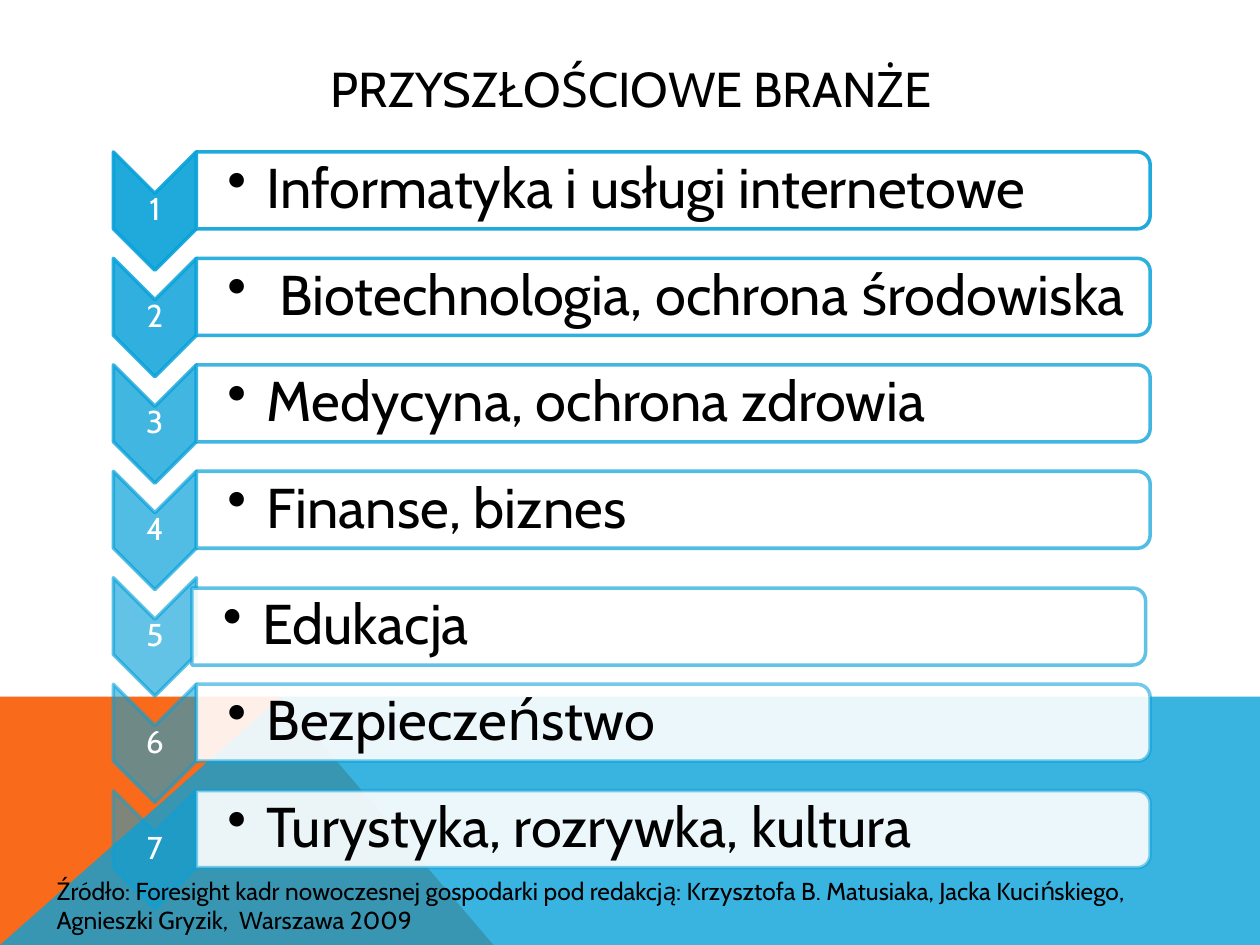
from pptx import Presentation
from pptx.dml.color import RGBColor
from pptx.enum import shapes as sh, text as tx
from pptx.oxml.ns import qn
from pptx.util import Pt
from lxml import etree

FONT = "Cabin"
BLUE, ORANGE, WHITE, BLACK = "08A1D9", "F96A1B", "FFFFFF", "000000"
BRANCHES = [
    "Informatyka i usługi internetowe",
    " Biotechnologia, ochrona środowiska",
    "Medycyna, ochrona zdrowia",
    "Finanse, biznes",
    "Edukacja",
    "Bezpieczeństwo",
    "Turystyka, rozrywka, kultura",
]
SOURCE = ("Źródło: Foresight kadr nowoczesnej gospodarki pod redakcją: "
          "Krzysztofa B. Matusiaka, Jacka Kucińskiego, Agnieszki Gryzik,  Warszawa 2009")


def paint(fill, color, alpha=100):
    """Give a fill a solid hex colour with an opacity in percent."""
    fill.solid()
    fill.fore_color.rgb = RGBColor.from_string(color)
    if alpha < 100:
        clr = fill._xPr.find(".//" + qn("a:srgbClr"))
        etree.SubElement(clr, qn("a:alpha"), val=str(round(alpha * 1000)))


def write(sp, words, size, color, align, anchor, insets=None):
    """Set a shape's single paragraph and return it."""
    tf = sp.text_frame
    tf.word_wrap = True
    tf.vertical_anchor = anchor
    if insets:
        tf.margin_left, tf.margin_top, tf.margin_right, tf.margin_bottom = map(Pt, insets)
    tf.text = words
    p = tf.paragraphs[0]
    p.alignment = align
    p.font.size = Pt(size)
    p.font.name = FONT
    p.font.color.rgb = RGBColor.from_string(color)
    return p


def add_turned(shapes, kind, box, fill, fill_alpha, line_alpha):
    """Add a preset shape turned by 90 degrees that covers the given box."""
    x, y, w, h = box
    sp = shapes.add_shape(kind, Pt(x + (w - h) / 2), Pt(y + (h - w) / 2), Pt(h), Pt(w))
    sp.rotation = 90
    sp.shadow.inherit = False
    paint(sp.fill, fill, fill_alpha)
    paint(sp.line.fill, BLUE, line_alpha)
    sp.line.width = Pt(2)


def add_backdrop(s, x, y, w, h):
    """Draw the orange and blue areas at the foot of the slide."""
    peak, foot, bottom = x + 160.8, x + 281.5, y + h
    areas = [
        ([(x, bottom), (x, y), (peak, y), (foot, bottom)], ORANGE, 100),
        ([(x, bottom), (peak, y), (x + w, y), (x + w, bottom)], BLUE, 80),
    ]
    for points, color, alpha in areas:
        fb = s.shapes.build_freeform(*points[0], scale=float(Pt(1)))
        fb.add_line_segments(points[1:], close=True)
        sp = fb.convert_to_shape()
        sp.shadow.inherit = False
        paint(sp.fill, color, alpha)
        sp.line.fill.background()


def add_title(s, x, y, w, h):
    """Place the slide title."""
    sp = s.shapes.title
    sp.left, sp.top, sp.width, sp.height = map(Pt, (x, y, w, h))
    write(sp, "PRZYSZŁOŚCIOWE BRANŻE", 28, BLACK, tx.PP_ALIGN.CENTER, tx.MSO_ANCHOR.MIDDLE)


def add_branch(shapes, number, name, alpha, shift, x, y, w, h):
    """Draw one numbered chevron with its bar and bullet text."""
    arrow_w, bar_h = 47.4, 44
    add_turned(shapes, sh.MSO_SHAPE.CHEVRON, (x, y, arrow_w, h), BLUE, alpha, alpha)
    sp = shapes.add_textbox(Pt(x), Pt(y + 23.5), Pt(arrow_w), Pt(20.2))
    p = write(sp, str(number), 18, WHITE, tx.PP_ALIGN.CENTER, tx.MSO_ANCHOR.MIDDLE, [0.8] * 4)
    p.line_spacing = 0.9

    dx, dy = shift
    left, top, width = x + arrow_w + dx, y + dy, w - arrow_w
    add_turned(shapes, sh.MSO_SHAPE.ROUND_2_SAME_RECTANGLE,
               (left, top, width, bar_h), WHITE, 90, alpha)
    sp = shapes.add_textbox(Pt(left), Pt(top + 2.2), Pt(width - 2.2), Pt(bar_h - 4.4))
    p = write(sp, name, 32, BLACK, tx.PP_ALIGN.LEFT, tx.MSO_ANCHOR.MIDDLE, [17.8, 1.6, 1.6, 1.6])
    p.level = 1
    p.line_spacing = 0.9
    pPr = p._p.get_or_add_pPr()
    pPr.set("marL", str(Pt(22.5)))
    pPr.set("indent", str(-Pt(22.5)))
    bullet = etree.Element(qn("a:buChar"), char="•")
    pPr.find(qn("a:defRPr")).addprevious(bullet)


def add_branches(s, x, y, w, pitch):
    """Stack the branches at an equal pitch, fading from first to last."""
    group = s.shapes.add_group_shape()
    for i, name in enumerate(BRANCHES):
        alpha = 90 - 40 * i / (len(BRANCHES) - 1)
        shift = (-2.6, 5.9) if name == "Edukacja" else (0, 0)
        add_branch(group.shapes, i + 1, name, alpha, shift, x, y + i * pitch, w, 67.6)


def add_source(s, x, y, w, h):
    """Place the source note."""
    sp = s.shapes.add_textbox(Pt(x), Pt(y), Pt(w), Pt(h))
    write(sp, SOURCE, 14, BLACK, tx.PP_ALIGN.LEFT, tx.MSO_ANCHOR.TOP)


def main():
    """Build and save the slide."""
    prs = Presentation()
    prs.slide_width, prs.slide_height = Pt(720), Pt(540)
    s = prs.slides.add_slide(prs.slide_layouts[5])
    add_backdrop(s, 0, 397.6, 720, 142.4)
    add_title(s, 64.8, 28.8, 592, 43.2)
    add_branches(s, 64.8, 86.8, 592.4, 60.84)
    add_source(s, 25.2, 496.8, 680.4, 64)
    prs.save("out.pptx")


if __name__ == "__main__":
    main()
